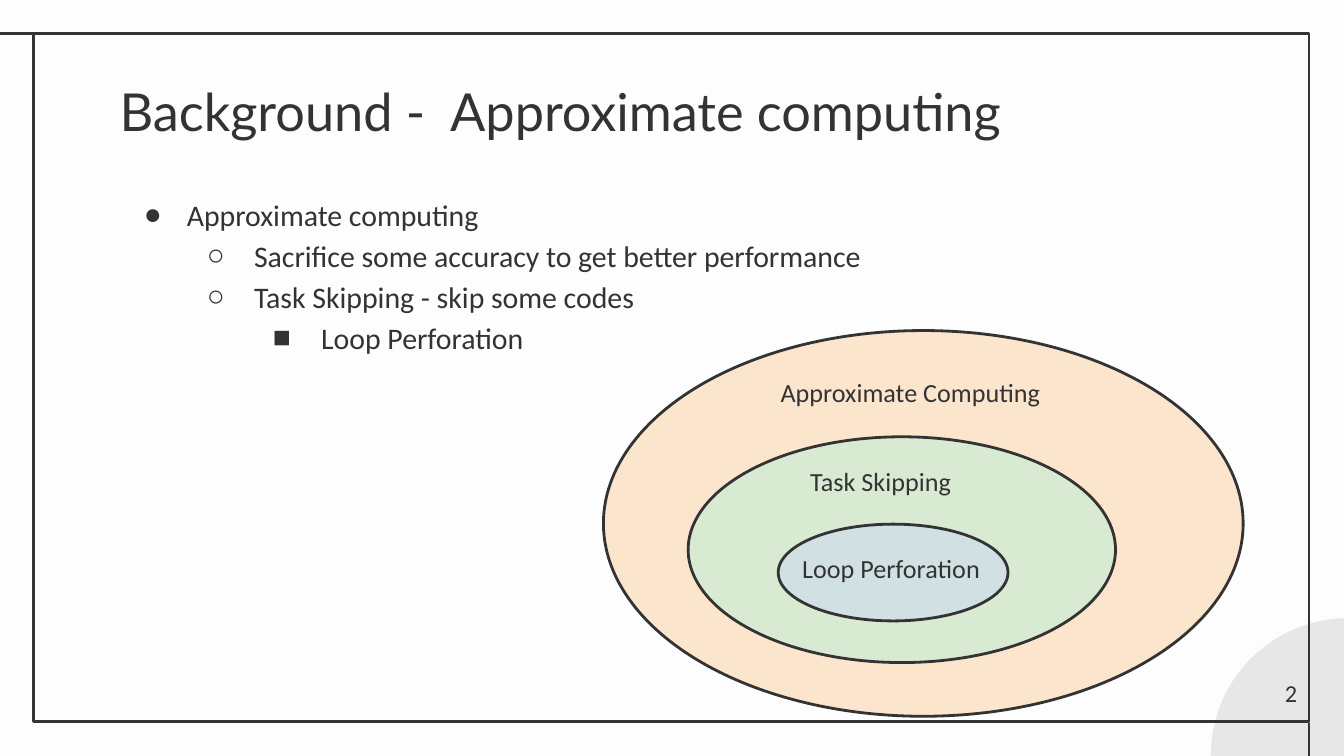
from lxml import etree
from pptx import Presentation
from pptx.dml.color import RGBColor
from pptx.enum import shapes, text
from pptx.oxml import ns
from pptx.util import Inches, Pt

INK = RGBColor(0x33, 0x33, 0x33)
PAPER = RGBColor(0xFD, 0xFD, 0xFD)
GREY = RGBColor(0xE8, 0xE7, 0xE7)
PEACH = RGBColor(0xFC, 0xE5, 0xCD)
GREEN = RGBColor(0xD9, 0xEA, 0xD3)
BLUE = RGBColor(0xD0, 0xE0, 0xE3)


def add_outline(page, kind, place, fill=None, line=INK):
    shape = page.shapes.add_shape(kind, *map(Inches, place))
    shape.shadow.inherit = False
    if fill is None:
        shape.fill.background()
    else:
        shape.fill.solid()
        shape.fill.fore_color.rgb = fill
    if line is None:
        shape.line.fill.background()
    else:
        shape.line.color.rgb = line
        shape.line.width = Pt(1.5)


def set_text(box, place, lines, size, font="Calibri", anchor=text.MSO_ANCHOR.TOP):
    box.left, box.top, box.width, box.height = map(Inches, place)
    frame = box.text_frame
    frame.text = "\n".join(lines)
    frame.word_wrap = True
    frame.auto_size = text.MSO_AUTO_SIZE.NONE
    frame.vertical_anchor = anchor
    frame.margin_left = frame.margin_right = Inches(0.1)
    frame.margin_top = frame.margin_bottom = Inches(0.1)
    for para in frame.paragraphs:
        para.alignment = text.PP_ALIGN.LEFT
        para.space_before = Pt(0)
        for span in para.runs:
            span.font.name = font
            span.font.size = Pt(size)
            span.font.color.rgb = INK
    return frame.paragraphs


# Widescreen page, 16:9
deck = Presentation()
deck.slide_width = Inches(10)
deck.slide_height = Inches(10 * 9 / 16)
page = deck.slides.add_slide(deck.slide_layouts[1])
page.background.fill.solid()
page.background.fill.fore_color.rgb = PAPER

# Corner circle and page frame
add_outline(page, shapes.MSO_SHAPE.OVAL, (9.01, 4.6, 2.04, 2.04), GREY, None)
add_outline(page, shapes.MSO_SHAPE.RECTANGLE, (0.25, 0.25, 9.49, 5.12))
for ends in [(0.26, 0.25, -0.02, 0.25), (9.74, 5.38, 9.74, 5.75)]:
    line = page.shapes.add_connector(shapes.MSO_CONNECTOR.STRAIGHT, *map(Inches, ends))
    line.line.color.rgb = INK
    line.line.width = Pt(1.5)
    etree.SubElement(line._element.spPr, ns.qn("a:effectLst"))

# Title
set_text(page.shapes.title, (0.79, 0.49, 8.43, 0.63),
         ["Background -  Approximate computing"], 28, "Lato")

# Bulleted list: level and text
items = [
    (0, "Approximate computing"),
    (1, "Sacrifice some accuracy to get better performance"),
    (1, "Task Skipping - skip some codes"),
    (2, "Loop Perforation"),
]
bullets = [("●", 0.32), ("○", 0.35), ("■", 0.36)]
paras = set_text(page.placeholders[1], (0.79, 1.32, 8.43, 1.38),
                 [item for level, item in items], 16)
for para, (level, item) in zip(paras, items):
    mark, hang = bullets[level]
    para.level = level
    para.line_spacing = 1.15
    props = para._p.get_or_add_pPr()
    props.set("marL", str(Inches(0.5 * (level + 1))))
    props.set("indent", str(-Inches(hang)))
    colour = etree.SubElement(props, ns.qn("a:buClr"))
    etree.SubElement(colour, ns.qn("a:srgbClr")).set("val", str(INK))
    etree.SubElement(props, ns.qn("a:buChar")).set("char", mark)

# Page number
number_place = (9.15, 4.94, 0.6, 0.43)
number_box = page.shapes.add_textbox(*map(Inches, number_place))
number = set_text(number_box, number_place, ["2"], 13, anchor=text.MSO_ANCHOR.MIDDLE)
number[0].alignment = text.PP_ALIGN.RIGHT

# Nested ellipses, outermost first, each with its label
rings = [
    ((4.49, 2.46, 4.76, 2.87), PEACH, "Approximate Computing", (5.71, 2.7, 2.33, 0.33)),
    ((5.12, 3.25, 3.18, 1.68), GREEN, "Task Skipping", (5.93, 3.36, 1.56, 0.33)),
    ((5.79, 3.9, 1.71, 0.72), BLUE, "Loop Perforation", (5.87, 4.01, 2.13, 0.33)),
]
for place, fill, label, label_place in rings:
    add_outline(page, shapes.MSO_SHAPE.OVAL, place, fill)
    label_box = page.shapes.add_textbox(*map(Inches, label_place))
    set_text(label_box, label_place, [label], 14)

deck.save("out.pptx")
